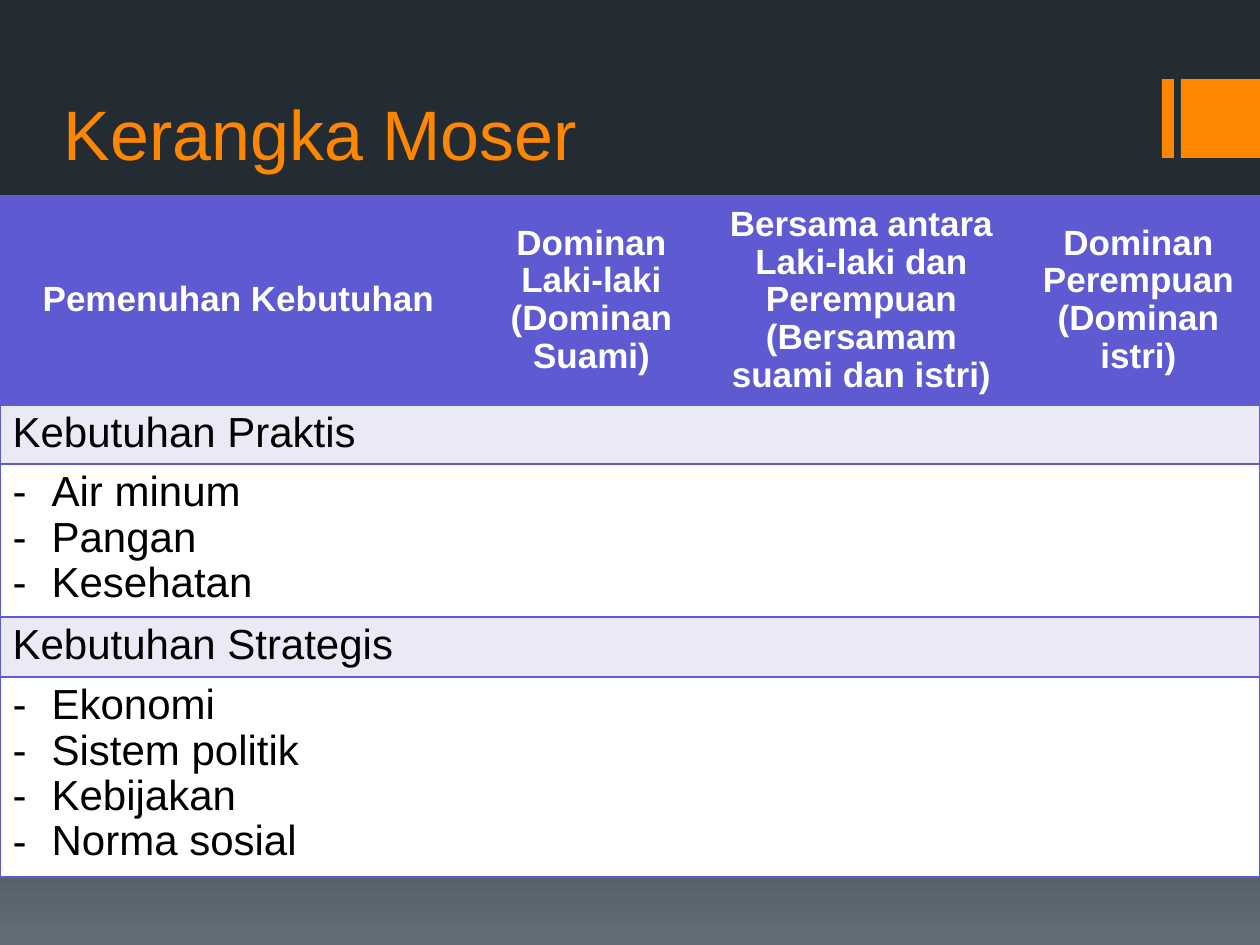
from copy import deepcopy

from lxml.etree import SubElement
from pptx import Presentation
from pptx.dml.color import RGBColor
from pptx.enum.shapes import MSO_SHAPE
from pptx.enum.text import MSO_ANCHOR, PP_ALIGN
from pptx.oxml import parse_xml
from pptx.oxml.ns import nsdecls, qn
from pptx.util import Pt

EMU_PER_PX = 914400 / 126
FONT = "Arial"
PLAIN_TABLE_STYLE = "{2D5ABB26-0587-4C30-8999-92F81FD0307C}"

ORANGE = RGBColor(0xFF, 0x86, 0x00)
VIOLET = RGBColor(0x5D, 0x5A, 0xD2)
LAVENDER = RGBColor(0xEA, 0xEA, 0xF7)
WHITE = RGBColor(0xFF, 0xFF, 0xFF)
BLACK = RGBColor(0x00, 0x00, 0x00)
BACKGROUND = [(0, RGBColor(0x24, 0x2C, 0x33)),
              (0.65, RGBColor(0x27, 0x30, 0x37)),
              (1, RGBColor(0x63, 0x6D, 0x76))]

HEADINGS = ["Pemenuhan Kebutuhan",
            "Dominan Laki-laki (Dominan Suami)",
            "Bersama antara Laki-laki dan Perempuan (Bersamam suami dan istri)",
            "Dominan Perempuan (Dominan istri)"]
NEEDS = [("Kebutuhan Praktis", ["Air minum", "Pangan", "Kesehatan"]),
         ("Kebutuhan Strategis",
          ["Ekonomi", "Sistem politik", "Kebijakan", "Norma sosial"])]
COLUMN_WIDTHS = [477, 229, 311, 243]
ROW_HEIGHTS = [209, 59, 153, 60, 200]


def px(length):
    return round(length * EMU_PER_PX)


class SlideBuilder:
    def __init__(self, presentation):
        self.slide = presentation.slides.add_slide(presentation.slide_layouts[5])

    def background(self, stops):
        fill = self.slide.background.fill
        fill.gradient()
        fill.gradient_angle = 270
        stop_list = self.slide.element.find(".//" + qn("a:gsLst"))
        stop_list.append(deepcopy(stop_list[0]))
        for stop, (position, color) in zip(fill.gradient_stops, stops):
            stop.position = position
            stop.color.rgb = color

    def bar(self, left, top, width, height):
        bar = self.slide.shapes.add_shape(
            MSO_SHAPE.RECTANGLE, px(left), px(top), px(width), px(height))
        bar.shadow.inherit = False
        bar.fill.solid()
        bar.fill.fore_color.rgb = ORANGE
        bar.line.fill.background()

    def title(self, text, left, top, width, height):
        title = self.slide.shapes.title
        title.left, title.top = px(left), px(top)
        title.width, title.height = px(width), px(height)
        frame = title.text_frame
        frame.text = text
        frame.vertical_anchor = MSO_ANCHOR.BOTTOM
        self.style(frame.paragraphs[0], 40, ORANGE, PP_ALIGN.LEFT)

    def style(self, paragraph, size, color, align, bold=False):
        paragraph.alignment = align
        for run in paragraph.runs:
            run.font.name = FONT
            run.font.size = Pt(size)
            run.font.bold = bold
            run.font.color.rgb = color

    def table(self, left, top, widths, heights):
        frame = self.slide.shapes.add_table(
            len(heights), len(widths), px(left), px(top),
            px(sum(widths)), px(sum(heights)))
        table = frame.table
        table._tbl.tblPr.find(qn("a:tableStyleId")).text = PLAIN_TABLE_STYLE
        for column, width in zip(table.columns, widths):
            column.width = px(width)
        for row, height in zip(table.rows, heights):
            row.height = px(height)
        return table

    def row(self, row, fill):
        last = len(row.cells) - 1
        for index, cell in enumerate(row.cells):
            cell.fill.solid()
            cell.fill.fore_color.rgb = fill
            sides = "L" * (index == 0) + "R" * (index == last) + "TB"
            for order, side in enumerate(sides):
                cell._tc.tcPr.insert(order, parse_xml(
                    f'<a:ln{side} {nsdecls("a")} w="12700"><a:solidFill>'
                    f'<a:srgbClr val="{VIOLET}"/></a:solidFill></a:ln{side}>'))

    def heading(self, cell, text):
        cell.vertical_anchor = MSO_ANCHOR.MIDDLE
        cell.text_frame.text = text
        paragraph = cell.text_frame.paragraphs[0]
        paragraph.line_spacing = 0.97
        self.style(paragraph, 20, WHITE, PP_ALIGN.CENTER, bold=True)

    def entries(self, cell, lines, bulleted=False):
        cell.text_frame.text = "\n".join(lines)
        for paragraph in cell.text_frame.paragraphs:
            paragraph.line_spacing = 0.97
            self.style(paragraph, 24, BLACK, PP_ALIGN.LEFT)
            if bulleted:
                properties = paragraph._p.get_or_add_pPr()
                properties.set("marL", str(px(39)))
                properties.set("indent", str(-px(39)))
                SubElement(properties, qn("a:buFont"), typeface=FONT)
                SubElement(properties, qn("a:buChar"), char="-")


def main():
    presentation = Presentation()
    presentation.slide_width, presentation.slide_height = px(1260), px(945)
    builder = SlideBuilder(presentation)
    builder.background(BACKGROUND)

    # Corner ornament and title
    builder.bar(1162, 79, 12, 79)
    builder.bar(1181, 79, 79, 79)
    builder.title("Kerangka Moser", 51, 23, 1096, 158)

    # Table header
    needs_table = builder.table(0, 196, COLUMN_WIDTHS, ROW_HEIGHTS)
    header, *body = needs_table.rows
    builder.row(header, VIOLET)
    for cell, text in zip(header.cells, HEADINGS):
        builder.heading(cell, text)

    # Each kind of need takes a group row and a row of examples
    for group, examples, (need, items) in zip(body[::2], body[1::2], NEEDS):
        builder.row(group, LAVENDER)
        builder.entries(group.cells[0], [need])
        builder.row(examples, WHITE)
        builder.entries(examples.cells[0], items, bulleted=True)

    presentation.save("out.pptx")


if __name__ == "__main__":
    main()
